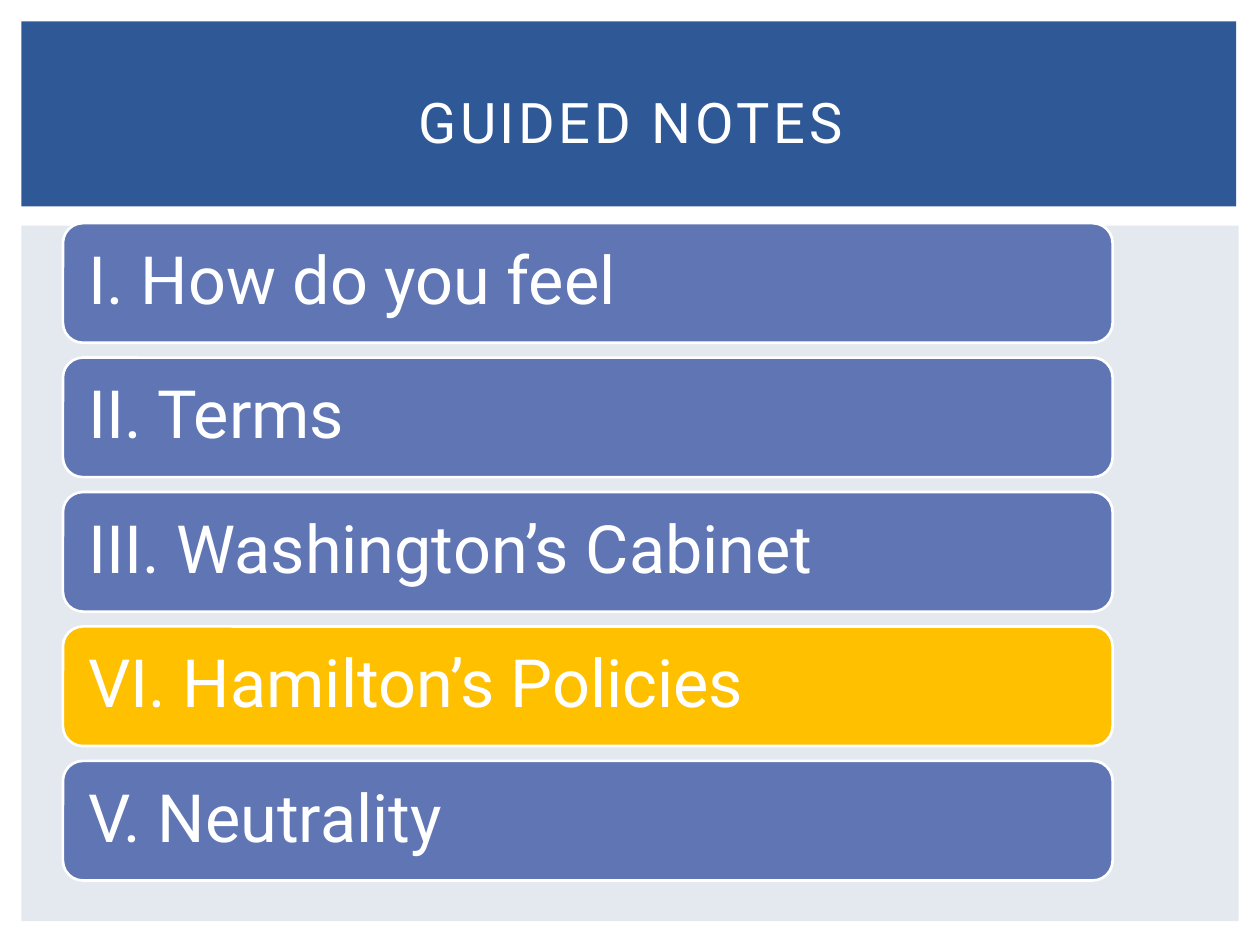
from dataclasses import dataclass

from pptx import Presentation
from pptx.dml.color import RGBColor as RGB
from pptx.enum.shapes import MSO_SHAPE as Kind
from pptx.enum.text import MSO_ANCHOR as Anchor, PP_ALIGN as Align
from pptx.util import Cm, Pt


@dataclass(frozen=True)
class Theme:
    font: str = "Roboto"
    head: int = 32
    item: int = 38
    edge: float = 1.5
    white: RGB = RGB(0xFF, 0xFF, 0xFF)
    pale: RGB = RGB(0xE4, 0xE9, 0xEF)
    navy: RGB = RGB(0x2F, 0x58, 0x97)
    blue: RGB = RGB(0x60, 0x76, 0xB4)
    gold: RGB = RGB(0xFF, 0xC0, 0x00)


class Deck:
    def __init__(self, theme):
        self.theme = theme
        self.file = Presentation()
        self.file.slide_width = Cm(25.4)
        self.file.slide_height = Cm(19.05)
        self.slide = self.file.slides.add_slide(self.file.slide_layouts[6])

    def shape(self, kind, box, fill):
        shape = self.slide.shapes.add_shape(kind, *map(Cm, box))
        shape.shadow.inherit = False
        shape.fill.solid()
        shape.fill.fore_color.rgb = fill
        shape.line.fill.background()
        return shape

    def panel(self, box, fill):
        self.shape(Kind.RECTANGLE, box, fill)

    def label(self, frame, text, size, align):
        frame.word_wrap = True
        frame.vertical_anchor = Anchor.MIDDLE
        para = frame.paragraphs[0]
        para.alignment = align
        run = para.add_run()
        run.text = text
        run.font.name = self.theme.font
        run.font.size = Pt(size)
        run.font.color.rgb = self.theme.white
        return run

    def title(self, box, text):
        frame = self.slide.shapes.add_textbox(*map(Cm, box)).text_frame
        run = self.label(frame, text, self.theme.head, Align.CENTER)
        run.font._element.set("spc", "200")

    def bar(self, box, text, fill):
        shape = self.shape(Kind.ROUNDED_RECTANGLE, box, fill)
        shape.line.color.rgb = self.theme.white
        shape.line.width = Pt(self.theme.edge)
        frame = shape.text_frame
        frame.margin_left = frame.margin_right = Cm(0.4)
        frame.margin_top = frame.margin_bottom = Cm(0.4)
        self.label(frame, text, self.theme.item, Align.LEFT)
        frame.paragraphs[0].line_spacing = 0.9


def main():
    theme = Theme()
    deck = Deck(theme)
    deck.panel((0.43, 4.55, 24.54, 14.02), theme.pale)
    deck.panel((0.43, 0.43, 24.49, 3.73), theme.navy)

    topics = [
        ("I. How do you feel", theme.blue),
        ("II. Terms", theme.blue),
        ("III. Washington’s Cabinet", theme.blue),
        ("VI. Hamilton’s Policies", theme.gold),
        ("V. Neutrality", theme.blue),
    ]
    top, step = 4.5, 2.71
    for row, (text, fill) in enumerate(topics):
        deck.bar((1.27, top + row * step, 21.16, 2.41), text, fill)

    deck.title((1.07, 0.99, 23.29, 2.92), "GUIDED NOTES")
    deck.file.save("out.pptx")


if __name__ == "__main__":
    main()
